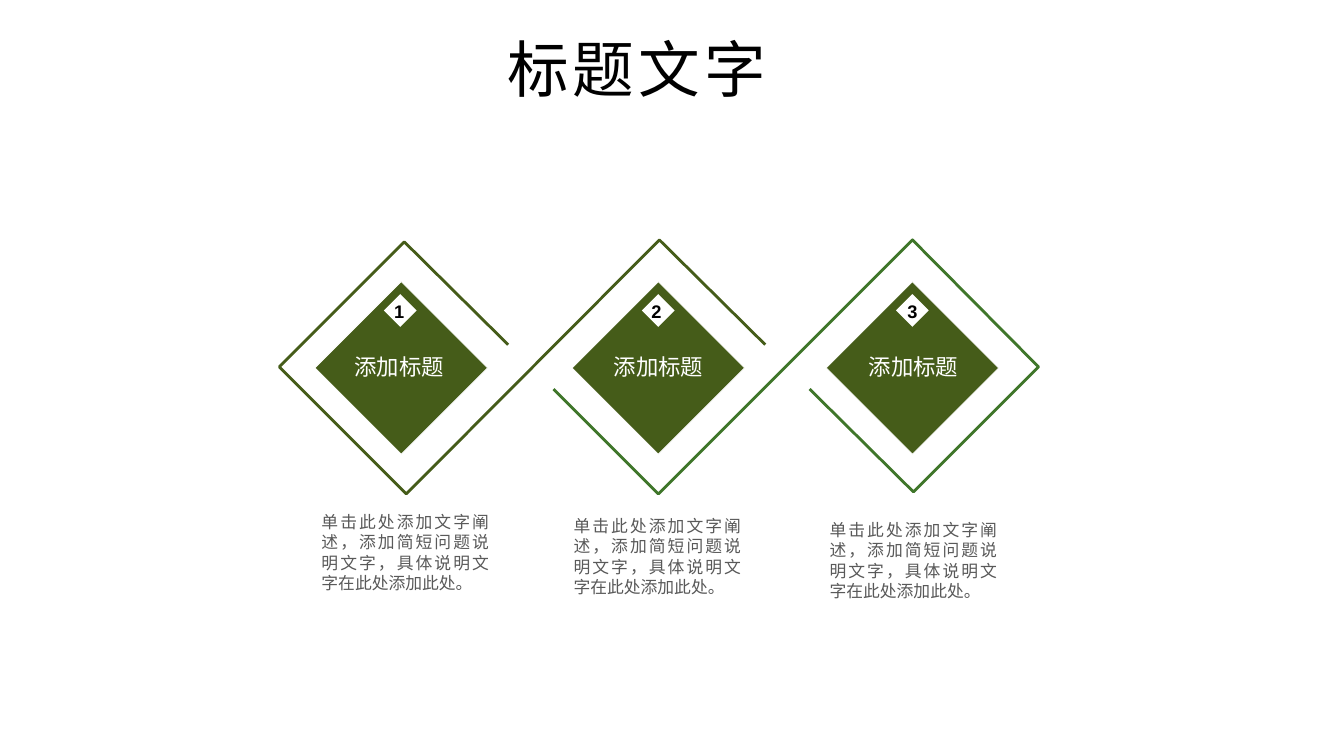
"""Build a slide of three linked diamonds with captions."""
from lxml.etree import SubElement
from pptx import Presentation
from pptx.dml.color import RGBColor
from pptx.enum.shapes import MSO_SHAPE as SHAPE
from pptx.enum.text import MSO_ANCHOR as ANCHOR, PP_ALIGN as ALIGN
from pptx.oxml.ns import qn
from pptx.util import Inches, Pt

TITLE = "标题文字"
HEADING = "添加标题"
BODY = "单击此处添加文字阐述，添加简短问题说明文字，具体说明文字在此处添加此处。"
GREEN, WHITE, BLACK, GREY = "455C19", "FFFFFF", "000000", "595959"
COLUMNS = [
    {"diamond": 3.98, "badge": 3.97, "number": 3.96, "heading": 3.96, "body": 4.02},
    {"diamond": 6.53, "badge": 6.53, "number": 6.51, "heading": 6.53, "body": 6.52},
    {"diamond": 9.05, "badge": 9.05, "number": 9.05, "heading": 9.06, "body": 9.06},
]
RIBBONS = [
    (GREEN, [(7.59, 3.42), (6.54, 2.38), (4.03, 4.9), (2.77, 3.64), (4.01, 2.4), (5.04, 3.42)]),
    ("3F762A", [(5.49, 3.86), (6.53, 4.9), (9.05, 2.38), (10.3, 3.64), (9.06, 4.88), (8.03, 3.86)]),
]


def rgb(color):
    return RGBColor.from_string(color)


def format_text(tf, text, size, color, align, font="Arial", bold=False):
    tf.text = text
    p = tf.paragraphs[0]
    p.alignment = align
    r = p.runs[0]
    r.font.size, r.font.bold, r.font.name = Pt(size), bold, font
    r.font.color.rgb = rgb(color)
    SubElement(r.font._element, qn("a:ea")).set("typeface", font)
    return r


def add_text(s, center, top, width, height, text, size, color, align, bold=False):
    box = s.shapes.add_textbox(Inches(center - width / 2), Inches(top), Inches(width), Inches(height))
    tf = box.text_frame
    tf.word_wrap = True
    format_text(tf, text, size, color, align, bold=bold)
    return tf


def add_diamond(s, center, middle, side, color, outline=None):
    sp = s.shapes.add_shape(SHAPE.RECTANGLE, Inches(center - side / 2), Inches(middle - side / 2),
                            Inches(side), Inches(side))
    sp.rotation = 315
    sp.shadow.inherit = False
    sp.fill.solid()
    sp.fill.fore_color.rgb = rgb(color)
    if outline:
        sp.line.color.rgb = rgb(outline)
        sp.line.width = Pt(0.5)
    else:
        sp.line.fill.background()


def add_ribbon(s, color, points):
    corners = [(Inches(x), Inches(y)) for x, y in points]
    builder = s.shapes.build_freeform(*corners[0])
    builder.add_line_segments(corners[1:], close=False)
    sp = builder.convert_to_shape()
    sp.shadow.inherit = False
    sp.fill.background()
    sp.line.color.rgb = rgb(color)
    sp.line.width = Pt(2)


def add_title(s):
    sp = s.shapes.title
    sp.left, sp.top, sp.width, sp.height = map(Inches, (4.93, 0.25, 3.19, 0.84))
    sp.text_frame.vertical_anchor = ANCHOR.MIDDLE
    r = format_text(sp.text_frame, TITLE, 44, BLACK, ALIGN.LEFT, "Noto Sans CJK JP")
    r.font._element.set("spc", "300")


def main():
    prs = Presentation()
    prs.slide_width, prs.slide_height = Inches(13.33), Inches(7.5)
    s = prs.slides.add_slide(prs.slide_layouts[5])
    add_title(s)
    for color, points in RIBBONS:
        add_ribbon(s, color, points)
    for i, col in enumerate(COLUMNS):
        add_diamond(s, col["diamond"], 3.65, 1.21, GREEN, WHITE)
        add_diamond(s, col["badge"], 3.08, 0.23, WHITE)
        tf = add_text(s, col["number"], 2.98, 0.1, 0.22, str(i + 1), 13, BLACK, ALIGN.CENTER, True)
        tf.word_wrap = False
        tf.vertical_anchor = ANCHOR.MIDDLE
        tf.margin_left = tf.margin_right = tf.margin_top = tf.margin_bottom = 0
        add_text(s, col["heading"], 3.45, 1.39, 0.38, HEADING, 16, WHITE, ALIGN.CENTER)
        add_text(s, col["body"], 5.03 + 0.04 * i, 1.86, 0.92, BODY, 12, GREY, ALIGN.JUSTIFY)
    prs.save("out.pptx")


if __name__ == "__main__":
    main()
